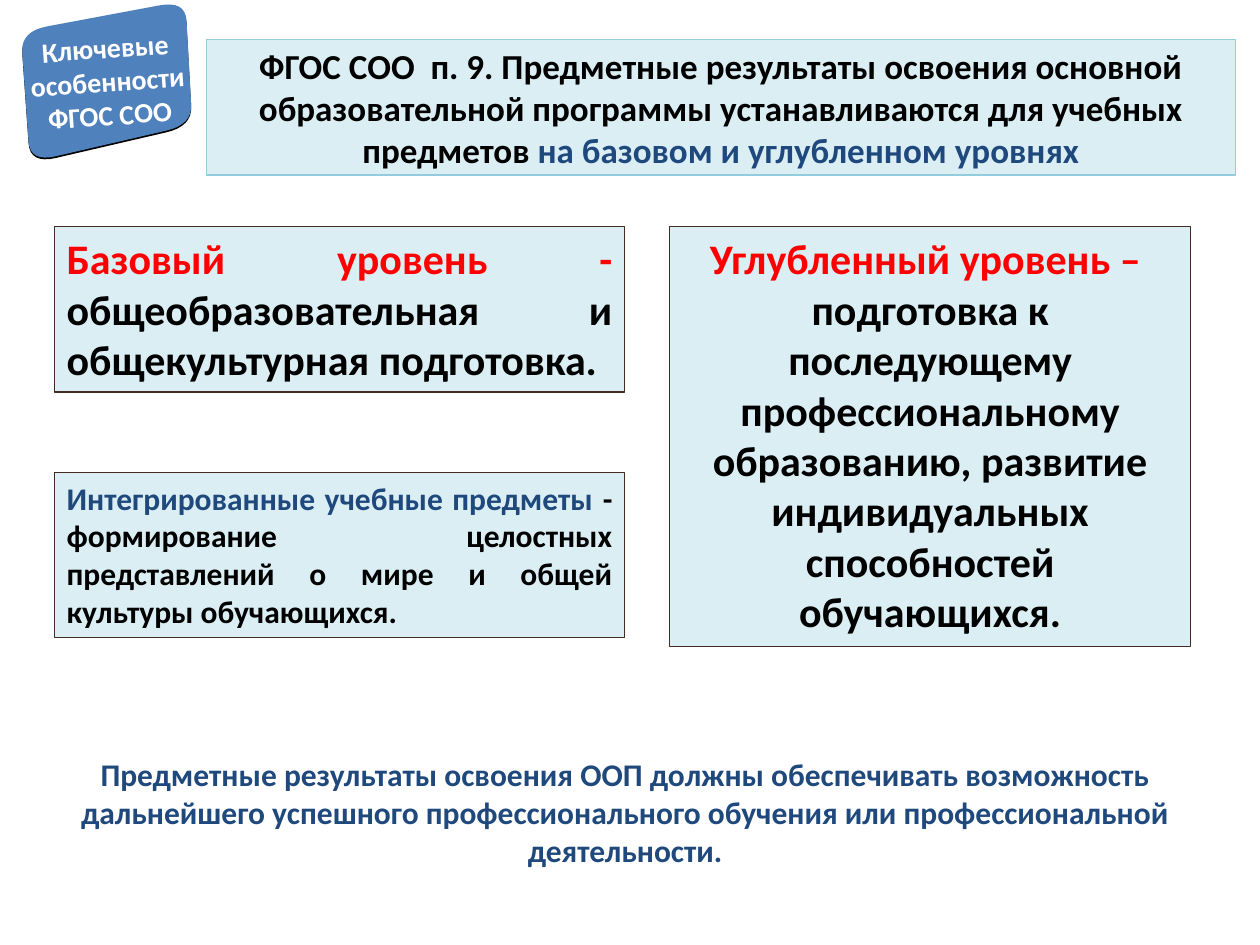
from lxml.etree import SubElement
from pptx import Presentation
from pptx.dml.color import RGBColor
from pptx.enum.shapes import MSO_SHAPE as Preset
from pptx.enum.text import MSO_ANCHOR as Anchor, MSO_AUTO_SIZE as AutoSize, PP_ALIGN as Align
from pptx.oxml.ns import qn
from pptx.util import Pt

THEME = {
    "font": "Calibri",
    "black": "000000", "white": "FFFFFF", "red": "FF0000", "navy": "1F497D",
    "badge": "4F81BD", "panel": "DBEEF4", "panel_line": "432D23", "title_line": "93CDDD",
    "small": 16, "body": 18, "title": 20, "large": 24,
    "line": 0.75,
}

# Each text is a list of paragraphs; each paragraph is a list of (text, colour) runs.
TITLE = [[("ФГОС СОО  п. 9. Предметные результаты освоения основной образовательной "
           "программы устанавливаются для учебных предметов ", "black"),
          ("на базовом и углубленном уровнях", "navy")]]
BADGE = [[("Ключевые особенности ФГОС СОО", "white")]]
BASIC = [[("Базовый уровень - ", "red"),
          ("общеобразовательная и общекультурная подготовка. ", "black")]]
ADVANCED = [[("Углубленный уровень – ", "red")],
            [("подготовка к последующему профессиональному образованию, развитие "
              "индивидуальных способностей обучающихся.", "black")]]
INTEGRATED = [[("Интегрированные учебные предметы", "navy"),
               (" - формирование целостных представлений о мире и общей культуры "
                "обучающихся.", "black")]]
CONCLUSION = [[("Предметные результаты освоения ООП должны обеспечивать возможность "
                "дальнейшего успешного профессионального обучения или профессиональной "
                "деятельности.", "navy")]]

# Left, top, width, height in points
TITLE_BOX = (118, 22.5, 588, 77.5)
LEFT, COLUMN_WIDTH, ROW_HEIGHT, TOP = 31, 326, 94.5, 129.5
PANELS = [
    (BASIC, (LEFT, TOP, COLUMN_WIDTH, ROW_HEIGHT), "large", Align.JUSTIFY),
    (ADVANCED, (382.5, TOP, 298, 240), "large", Align.CENTER),
    (INTEGRATED, (LEFT, 270, COLUMN_WIDTH, ROW_HEIGHT), "body", Align.JUSTIFY),
]
CONCLUSION_BOX = (22.5, 428, 669.5, 72.5)

BADGE_CENTRE = (61, 46.5)
BADGE_CORNERS = [(-47, -32), (48, -43), (47, 28), (-47, 43)]
BADGE_RADIUS, BADGE_TILT = 0.16, -4


def color(name):
    return RGBColor.from_string(THEME[name])


def paint(shape, fill, line=None):
    shape.fill.solid()
    shape.fill.fore_color.rgb = color(fill)
    if line:
        shape.line.color.rgb = color(line)
        shape.line.width = Pt(THEME["line"])
    else:
        shape.line.fill.background()


def write(shape, paragraphs, size, align=Align.CENTER, anchor=Anchor.TOP, margin=None):
    frame = shape.text_frame
    frame.word_wrap = True
    frame.auto_size = AutoSize.NONE
    frame.vertical_anchor = anchor
    if margin is not None:
        frame.margin_left = frame.margin_right = Pt(margin)
    for index, runs in enumerate(paragraphs):
        paragraph = frame.add_paragraph() if index else frame.paragraphs[0]
        paragraph.alignment = align
        for text, name in runs:
            run = paragraph.add_run()
            run.text = text
            run.font.name = THEME["font"]
            run.font.size = Pt(THEME[size])
            run.font.bold = True
            run.font.color.rgb = color(name)


def rounded_outline(corners, share, steps=8):
    """Return the polygon's points with each corner replaced by a quadratic curve."""
    points = []
    for index, corner in enumerate(corners):
        before, after = corners[index - 1], corners[(index + 1) % len(corners)]
        start, end = ([c + (n - c) * share for c, n in zip(corner, near)]
                      for near in (before, after))
        for step in range(steps + 1):
            t = step / steps
            points.append(tuple((1 - t) ** 2 * s + 2 * t * (1 - t) * c + t ** 2 * e
                                for s, c, e in zip(start, corner, end)))
    return points


def add_badge(slide):
    points = [tuple(Pt(centre + offset) for centre, offset in zip(BADGE_CENTRE, point))
              for point in rounded_outline(BADGE_CORNERS, BADGE_RADIUS)]
    builder = slide.shapes.build_freeform(*points[0])
    builder.add_line_segments(points[1:], close=True)
    badge = builder.convert_to_shape()
    badge.rotation = BADGE_TILT
    paint(badge, "badge")
    badge.shadow.inherit = False
    effects = badge._element.spPr.find(qn("a:effectLst"))
    shadow = SubElement(effects, qn("a:outerShdw"), dist=str(Pt(1)), dir="5400000",
                        rotWithShape="0")
    SubElement(shadow, qn("a:srgbClr"), val=THEME["black"])
    write(badge, BADGE, "small", anchor=Anchor.MIDDLE, margin=0)


def main():
    presentation = Presentation()
    presentation.slide_width, presentation.slide_height = Pt(720), Pt(540)
    slide = presentation.slides.add_slide(presentation.slide_layouts[5])

    title = slide.shapes.title
    title.left, title.top, title.width, title.height = map(Pt, TITLE_BOX)
    paint(title, "panel", "title_line")
    write(title, TITLE, "title", anchor=Anchor.MIDDLE)

    add_badge(slide)

    for paragraphs, box, size, align in PANELS:
        panel = slide.shapes.add_shape(Preset.RECTANGLE, *map(Pt, box))
        panel.shadow.inherit = False
        paint(panel, "panel", "panel_line")
        write(panel, paragraphs, size, align)

    conclusion = slide.shapes.add_textbox(*map(Pt, CONCLUSION_BOX))
    write(conclusion, CONCLUSION, "body")

    presentation.save("out.pptx")


if __name__ == "__main__":
    main()
